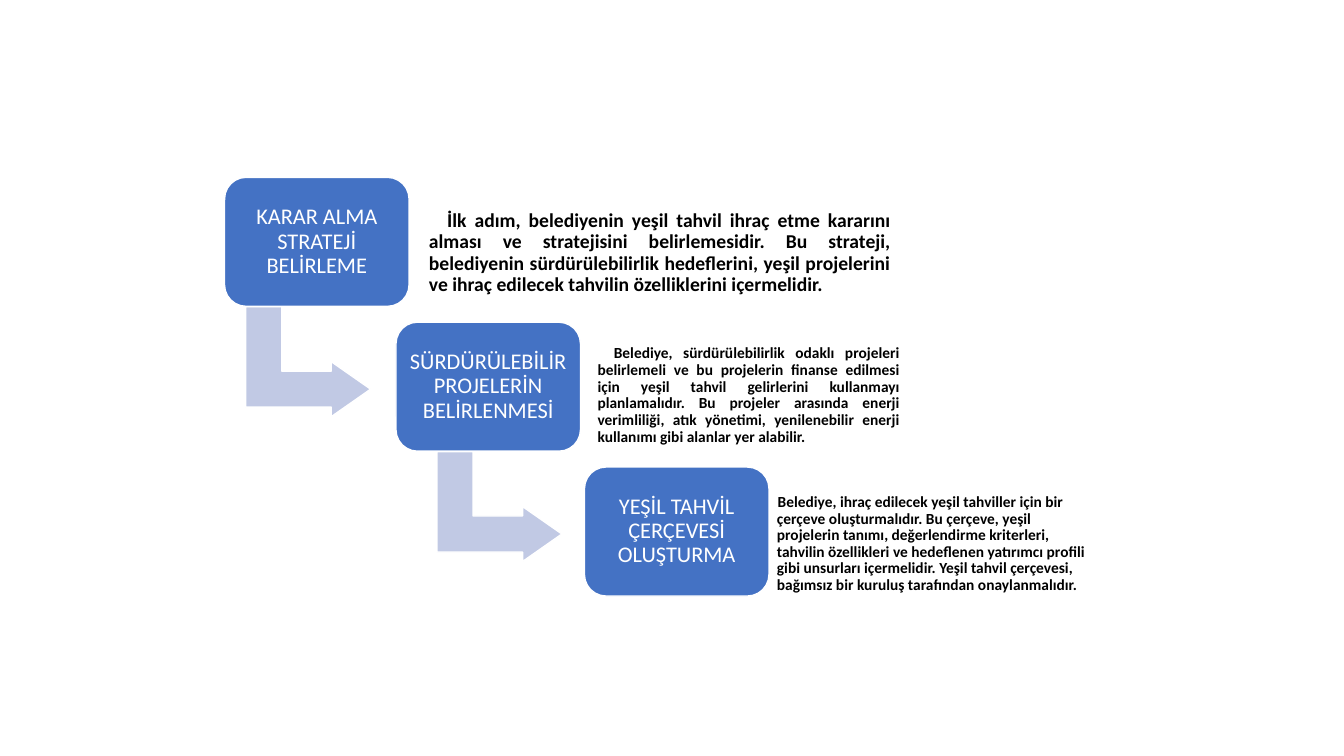
import pptx
import pptx.util
import pptx.dml.color
import pptx.enum.shapes
import pptx.enum.text

Cm = pptx.util.Cm
SHAPE = pptx.enum.shapes.MSO_SHAPE
ALIGN = pptx.enum.text.PP_ALIGN
ANCHOR = pptx.enum.text.MSO_ANCHOR

COLORS = {"box": "4472C4", "arrow": "C1C9E4", "white": "FFFFFF", "text": "000000"}

# Lengths in cm; "note" is left, top, width, height; "pad" is left, top, right
STEPS = [
    {"title": "KARAR ALMA STRATEJİ BELİRLEME", "left": 5.66, "arrow": 6.38,
     "text": "İlk adım, belediyenin yeşil tahvil ihraç etme kararını alması ve "
             "stratejisini belirlemesidir. Bu strateji, belediyenin sürdürülebilirlik "
             "hedeflerini, yeşil projelerini ve ihraç edilecek tahvilin özelliklerini "
             "içermelidir.",
     "note": (10.36, 3.99, 12.24, 4.17), "pad": (0.45, 1.32, 0.15),
     "indent": 0.46, "size": 14, "align": ALIGN.JUSTIFY},
    {"title": "SÜRDÜRÜLEBİLİR PROJELERİN BELİRLENMESİ", "left": 9.98, "arrow": 11.2,
     "text": "Belediye, sürdürülebilirlik odaklı projeleri belirlemeli ve bu projelerin "
             "finanse edilmesi için yeşil tahvil gelirlerini kullanmayı planlamalıdır. "
             "Bu projeler arasında enerji verimliliği, atık yönetimi, yenilenebilir "
             "enerji kullanımı gibi alanlar yer alabilir.",
     "note": (14.78, 8.43, 8.03, 2.64), "pad": (0.28, 0.28, 0.13),
     "indent": 0.41, "size": 11, "align": ALIGN.JUSTIFY},
    {"title": "YEŞİL TAHVİL ÇERÇEVESİ OLUŞTURMA", "left": 14.73, "arrow": None,
     "text": "Belediye, ihraç edilecek yeşil tahviller için bir çerçeve oluşturmalıdır. "
             "Bu çerçeve, yeşil projelerin tanımı, değerlendirme kriterleri, tahvilin "
             "özellikleri ve hedeflenen yatırımcı profili gibi unsurları içermelidir. "
             "Yeşil tahvil çerçevesi, bağımsız bir kuruluş tarafından onaylanmalıdır.",
     "note": (19.3, 12.17, 8.48, 2.64), "pad": (0.28, 0.28, 0.13),
     "indent": 0.02, "size": 11, "align": ALIGN.LEFT},
]
TOP, PITCH = 4.47, 3.65
BOX_W, BOX_H = 4.65, 3.25
ARROW_W, ARROW_H, ARROW_DROP = 2.77, 3.15, 3.07


def color(name):
    return pptx.dml.color.RGBColor.from_string(COLORS[name])


def add_part(slide, kind, place, fill, adjust):
    part = slide.shapes.add_shape(kind, *map(Cm, place))
    part.shadow.inherit = False
    part.fill.solid()
    part.fill.fore_color.rgb = color(fill)
    part.line.color.rgb = color("white")
    part.line.width = pptx.util.Pt(1)
    for i, value in enumerate(adjust):
        part.adjustments[i] = value
    return part


def write(shape, text, size, ink, align, anchor, pads, bold=False):
    """Fill a shape with one paragraph; pads are left, top, right, bottom."""
    frame = shape.text_frame
    frame.text = text
    frame.word_wrap = True
    frame.vertical_anchor = anchor
    (frame.margin_left, frame.margin_top,
     frame.margin_right, frame.margin_bottom) = map(Cm, pads)
    para = frame.paragraphs[0]
    para.alignment = align
    para.line_spacing = 0.9
    font = para.runs[0].font
    font.name = "Calibri"
    font.size = pptx.util.Pt(size)
    font.bold = bold
    font.color.rgb = color(ink)
    return para


def add_step(slide, step, top):
    if step["arrow"] is not None:
        arrow = add_part(slide, SHAPE.BENT_UP_ARROW,
                         (step["arrow"], top + ARROW_DROP, ARROW_W, ARROW_H),
                         "arrow", (0.328, 0.25, 0.358))
        arrow.rotation = 90
    box = add_part(slide, SHAPE.ROUNDED_RECTANGLE,
                   (step["left"], top, BOX_W, BOX_H), "box", (0.167,))
    write(box, step["title"], 16, "white", ALIGN.CENTER, ANCHOR.MIDDLE, (0.17,) * 4)
    note = slide.shapes.add_textbox(*map(Cm, step["note"]))
    para = write(note, step["text"], step["size"], "text", step["align"],
                 ANCHOR.TOP, step["pad"] + (0.13,), bold=True)
    para._p.get_or_add_pPr().set("indent", str(int(Cm(step["indent"]))))


def main():
    deck = pptx.Presentation()
    deck.slide_width, deck.slide_height = Cm(33.87), Cm(19.05)
    slide = deck.slides.add_slide(deck.slide_layouts[6])
    for i, step in enumerate(STEPS):
        add_step(slide, step, TOP + i * PITCH)
    deck.save("out.pptx")


if __name__ == "__main__":
    main()
